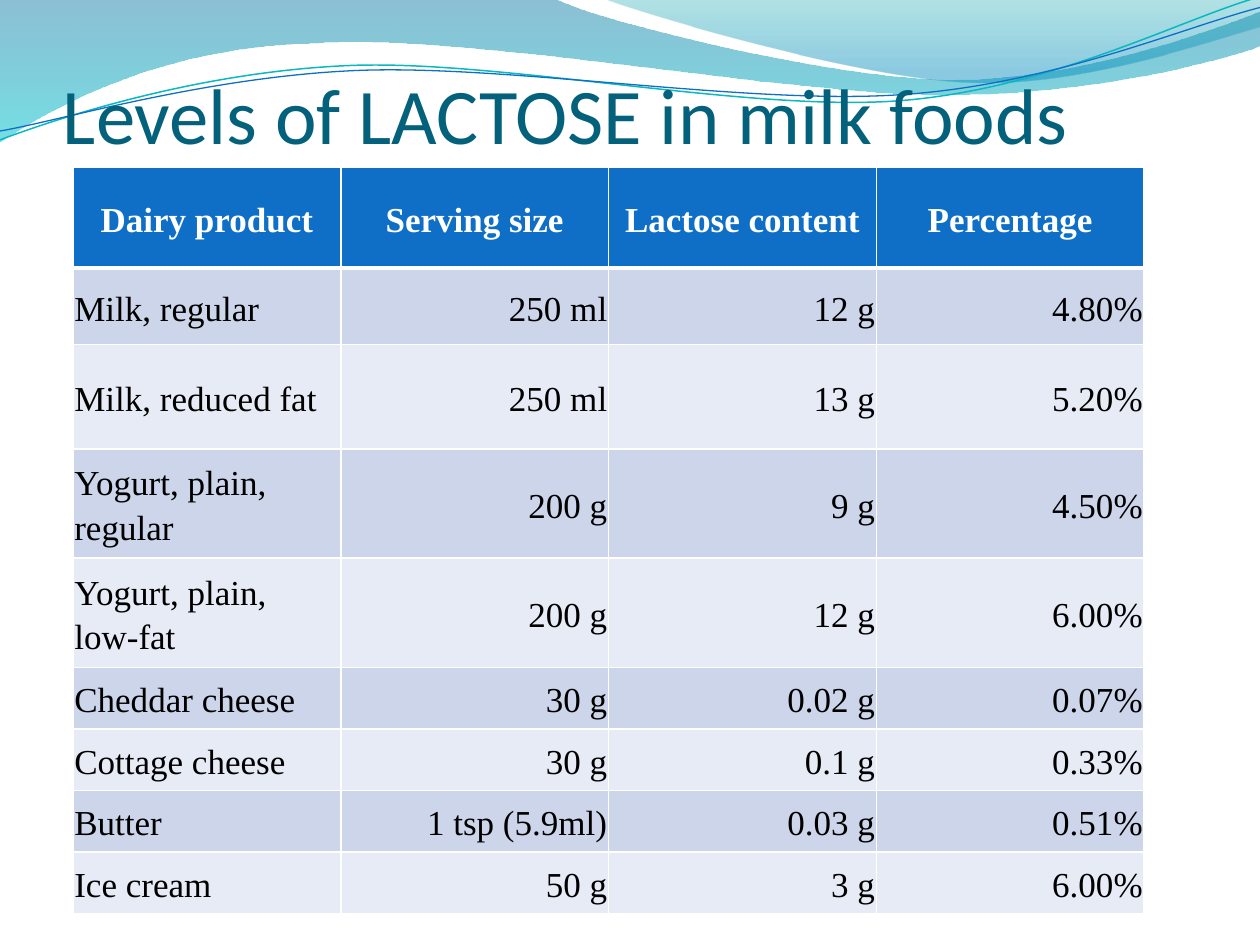
from dataclasses import dataclass
from math import cos, radians, sin
from lxml.etree import SubElement
from pptx import Presentation
from pptx.dml.color import RGBColor as Color
from pptx.enum.text import MSO_ANCHOR as Anchor, PP_ALIGN as Align
from pptx.oxml.ns import qn
from pptx.util import Inches, Pt


@dataclass(frozen=True)
class Theme:
    title_font: str = "Calibri"
    table_font: str = "Times New Roman"
    title_size: float = 45
    table_size: float = 20
    title_color: str = "04617B"
    header_fill: str = "0F6FC6"
    header_text: str = "FFFFFF"
    body_text: str = "000000"
    border: str = "FFFFFF"
    bands: tuple = ("CCD5EA", "E7EBF5")
    wide_wave: tuple = ((0, "0074A1", 45), (1, "00C6CF", 55))
    corner_wave: tuple = ((0, "00A1A9", 30), (0.8, "008BBF", 45))
    teal_line: str = "0AB8BF"
    blue_line: str = "0F6FC6"


THEME = Theme()
WIDTH, HEIGHT = 10, 7.5
TABLE_LEFT, TABLE_TOP, TABLE_WIDTH, TABLE_HEIGHT = 0.58, 1.33, 8.5, 5.92
ROW_SHARES = (0.8, 0.61, 0.83, 0.87, 0.87, 0.49, 0.49, 0.49, 0.49)
CELL_INSET = 0.01
CURVE_TILT = -2.7

LACTOSE_ROWS = (
    ("Dairy product", "Serving size", "Lactose content", "Percentage"),
    ("Milk, regular", "250 ml", "12 g", "4.80%"),
    ("Milk, reduced fat", "250 ml", "13 g", "5.20%"),
    ("Yogurt, plain, regular", "200 g", "9 g", "4.50%"),
    ("Yogurt, plain, low-fat", "200 g", "12 g", "6.00%"),
    ("Cheddar cheese", "30 g", "0.02 g", "0.07%"),
    ("Cottage cheese", "30 g", "0.1 g", "0.33%"),
    ("Butter", "1 tsp (5.9ml)", "0.03 g", "0.51%"),
    ("Ice cream", "50 g", "3 g", "6.00%"),
)

WIDE_WAVE = (
    (0, 0), (4.4, -0.01),
    (4.76, 0.17, 6.64, 0.63, 7.58, 0.63), (8.53, 0.63, 9.58, 0.26, 10, 0.09),
    (10.01, 0.36),
    (9.83, 0.44, 8.7, 0.76, 7.46, 0.75), (6.22, 0.75, 3.82, 0.28, 2.57, 0.34),
    (1.29, 0.36, 0.46, 0.83, -0.01, 1.13), (0, 0),
)
CORNER_WAVE = (
    (4.79, -0.01),
    (5.09, 0.11, 6.82, 0.62, 7.69, 0.65), (8.56, 0.69, 9.61, 0.32, 10, 0.21),
    (10, 0), (4.79, -0.01),
)
TEAL_CURVE = (
    (0, 1.11),
    (0.48, 0.93, 1.58, 0.57, 2.77, 0.52), (3.95, 0.47, 5.93, 0.89, 7.13, 0.8),
    (8.33, 0.71, 9.38, 0.15, 9.98, -0.02),
)
BLUE_CURVE = (
    (0, 1.04),
    (0.47, 0.96, 1.64, 0.61, 2.83, 0.56), (4.03, 0.51, 5.97, 0.84, 7.17, 0.75),
    (8.36, 0.67, 9.41, 0.21, 10, 0.06),
)


def points_of(step):
    return list(zip(step[::2], step[1::2]))


def level(outline, center):
    angle = radians(-CURVE_TILT)

    def turn(point):
        x, y = point[0] - center[0], point[1] - center[1]
        return (center[0] + x * cos(angle) - y * sin(angle),
                center[1] + x * sin(angle) + y * cos(angle))

    return [sum((turn(point) for point in points_of(step)), ()) for step in outline]


def add_outline(slide, outline, close):
    start, *steps = outline
    builder = slide.shapes.build_freeform(*map(Inches, start))
    vertices = [tuple(map(Inches, point)) for step in steps for point in points_of(step)]
    builder.add_line_segments(vertices, close=close)
    shape = builder.convert_to_shape()
    shape.shadow.inherit = False
    segments = iter(list(shape._element.iter(qn("a:lnTo"))))
    for step in steps:
        segment = next(segments)
        if len(step) == 6:
            segment.tag = qn("a:cubicBezTo")
            for _ in range(2):
                extra = next(segments)
                segment.append(extra[0])
                extra.getparent().remove(extra)
    return shape


def add_wave(slide, outline, stops):
    shape = add_outline(slide, outline, close=True)
    shape.line.fill.background()
    shape.fill.gradient()
    shape.fill.gradient_angle = 270
    for stop, (position, color, _) in zip(shape.fill.gradient_stops, stops):
        stop.position = position
        stop.color.rgb = Color.from_string(color)
    colors = shape._element.spPr.iter(qn("a:srgbClr"))
    for element, (_, _, opacity) in zip(colors, stops):
        SubElement(element, qn("a:alpha"), val=str(opacity * 1000))


def add_curve(slide, outline, center, color, weight):
    shape = add_outline(slide, level(outline, center), close=False)
    shape.rotation = CURVE_TILT
    shape.fill.background()
    shape.line.color.rgb = Color.from_string(color)
    shape.line.width = Pt(weight)


def add_run(paragraph, text, font, size, color, bold=False):
    run = paragraph.add_run()
    run.text = text
    run.font.name = font
    run.font.size = Pt(size)
    run.font.bold = bold
    run.font.color.rgb = Color.from_string(color)


def add_title(slide, text):
    box = slide.shapes.add_textbox(
        Inches(0.05 * WIDTH), Inches(0.77), Inches(0.9 * WIDTH), Inches(1.25))
    frame = box.text_frame
    frame.word_wrap = True
    frame.vertical_anchor = Anchor.BOTTOM
    frame.margin_left = frame.margin_right = frame.margin_bottom = 0
    frame.margin_top = Inches(0.05)
    paragraph = frame.paragraphs[0]
    add_run(paragraph, text, THEME.title_font, THEME.title_size, THEME.title_color)
    paragraph.add_line_break()
    size = str(THEME.title_size * 100)
    for parent, tag in ((paragraph._p[-1], "a:rPr"), (paragraph._p, "a:endParaRPr")):
        properties = SubElement(parent, qn(tag), sz=size)
        SubElement(properties, qn("a:latin"), typeface=THEME.title_font)


def set_borders(cell, top, bottom):
    properties = cell._tc.get_or_add_tcPr()
    for side, weight in (("L", 1), ("R", 1), ("T", top), ("B", bottom)):
        line = SubElement(properties, qn(f"a:ln{side}"), w=str(Pt(weight)))
        fill = SubElement(line, qn("a:solidFill"))
        SubElement(fill, qn("a:srgbClr"), val=THEME.border)


def fill_cell(cell, text, row, column):
    header = row == 0
    set_borders(cell, top=3 if row == 1 else 1, bottom=3 if header else 1)
    cell.fill.solid()
    cell.fill.fore_color.rgb = Color.from_string(
        THEME.header_fill if header else THEME.bands[(row - 1) % 2])
    cell.vertical_anchor = Anchor.MIDDLE
    cell.margin_left = cell.margin_right = Inches(CELL_INSET)
    cell.margin_top = cell.margin_bottom = Inches(CELL_INSET)
    paragraph = cell.text_frame.paragraphs[0]
    paragraph.line_spacing = 1.15
    paragraph.alignment = Align.CENTER if header else Align.RIGHT if column else Align.LEFT
    color = THEME.header_text if header else THEME.body_text
    add_run(paragraph, text, THEME.table_font, THEME.table_size, color, header)


def add_lactose_table(slide):
    columns = len(LACTOSE_ROWS[0])
    table = slide.shapes.add_table(
        len(LACTOSE_ROWS), columns, Inches(TABLE_LEFT), Inches(TABLE_TOP),
        Inches(TABLE_WIDTH), Inches(TABLE_HEIGHT)).table
    table.horz_banding = False
    for column in table.columns:
        column.width = Inches(TABLE_WIDTH / columns)
    for row, (share, texts) in enumerate(zip(ROW_SHARES, LACTOSE_ROWS)):
        table.rows[row].height = Inches(TABLE_HEIGHT * share / sum(ROW_SHARES))
        for column, text in enumerate(texts):
            fill_cell(table.cell(row, column), text, row, column)


def main():
    presentation = Presentation()
    presentation.slide_width, presentation.slide_height = Inches(WIDTH), Inches(HEIGHT)
    slide = presentation.slides.add_slide(presentation.slide_layouts[6])
    add_wave(slide, WIDE_WAVE, THEME.wide_wave)
    add_wave(slide, CORNER_WAVE, THEME.corner_wave)
    add_curve(slide, TEAL_CURVE, (4.99, 0.58), THEME.teal_line, 0.85)
    add_curve(slide, BLUE_CURVE, (5, 0.59), THEME.blue_line, 0.75)
    add_title(slide, "Levels of LACTOSE in milk foods")
    add_lactose_table(slide)
    presentation.save("out.pptx")


if __name__ == "__main__":
    main()
